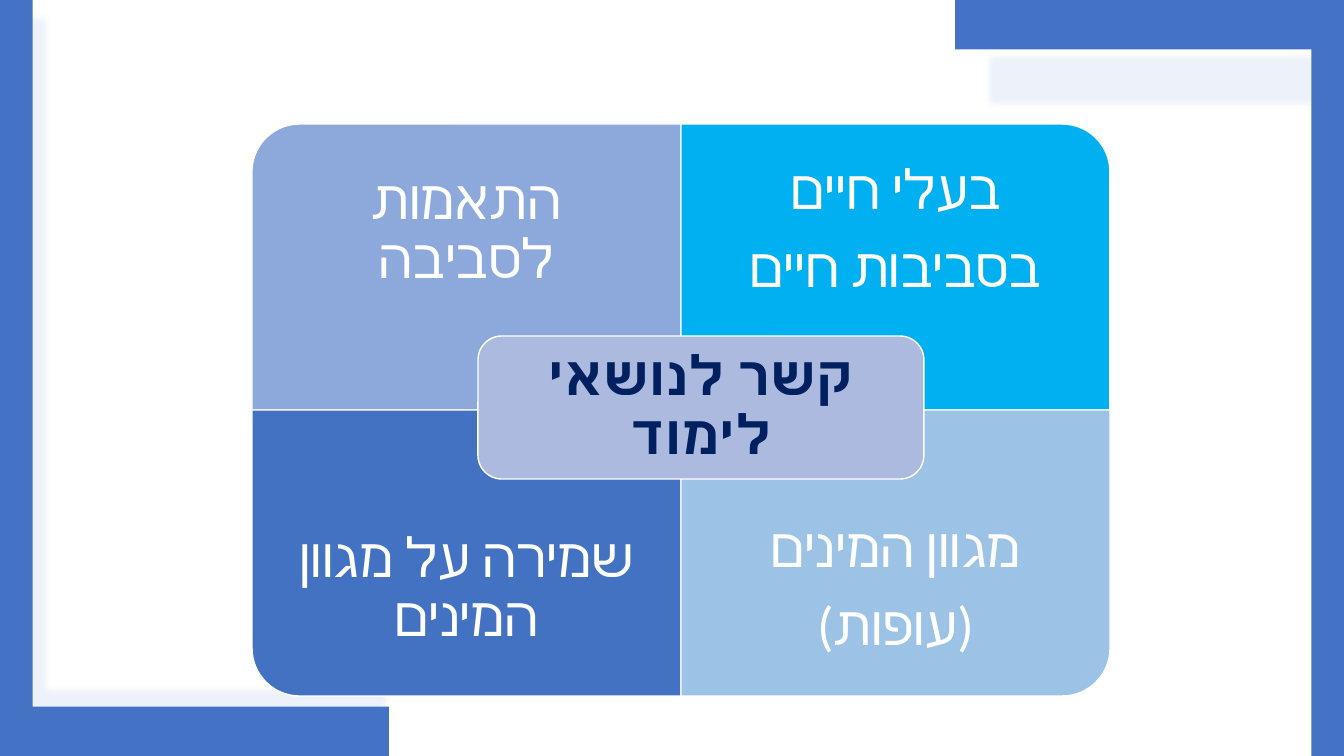
"""Builds a four-tile matrix slide of study topics with a central title."""
from lxml import etree
from pptx import Presentation
from pptx.dml.color import RGBColor
from pptx.enum.shapes import MSO_SHAPE as SHP
from pptx.enum.text import MSO_ANCHOR, PP_ALIGN
from pptx.oxml.ns import qn
from pptx.util import Emu, Pt

COLORS = {
    "frame": "4472C4", "shadow": "D2DDF1", "line": "FFFFFF", "text": "FFFFFF",
    "adaptation": "8DA9DB", "habitats": "00B0F0",
    "conservation": "4372C3", "species": "9CC2E5",
    "center": "ABBADE", "title": "002060",
}
TILES = [
    ("adaptation", 0, 0, 270, ["התאמות לסביבה"]),
    ("habitats", 1, 0, 0, ["בעלי חיים", "בסביבות חיים"]),
    ("conservation", 0, 1, 180, ["שמירה על מגוון המינים"]),
    ("species", 1, 1, 90, ["מגוון המינים", "(עופות)"]),
]
TITLE = ["קשר לנושאי לימוד"]
SLIDE_W, SLIDE_H = 1344, 756
FRAME_W = 389
FRAMES = [(SLIDE_W - FRAME_W, 180), (0, 0)]
GRID_X, GRID_Y = 252, 124
TILE_W, TILE_H = 429, 286
LABEL_H = TILE_H * 3 // 4
CENTER_BOX = (478, 336, 446, 143)
FONT = {"name": "Calibri", "size": Pt(39)}
PARA = {"alignment": PP_ALIGN.CENTER, "line_spacing": 0.9}
SHADOW = {"blurRad": "50800", "dist": "38100", "dir": "10800000",
          "sx": "95000", "sy": "95000", "algn": "r"}


def px(n):
    return Emu(round(n * 914400 / 100.8))


def rgb(key):
    return RGBColor.from_string(COLORS[key])


def set_all(obj, values):
    for name, value in values.items():
        setattr(obj, name, value)


def add_shape(s, kind, box, fill, rotation=0, outlined=True):
    sp = s.shapes.add_shape(kind, *map(px, box))
    sp.shadow.inherit = False
    sp.rotation = rotation
    sp.fill.solid()
    sp.fill.fore_color.rgb = rgb(fill)
    if outlined:
        sp.line.color.rgb = rgb("line")
        sp.line.width = Pt(1)
    else:
        sp.line.fill.background()
    return sp


def add_shadow(sp):
    effects = sp._element.spPr.find(qn("a:effectLst"))
    outer = etree.SubElement(effects, qn("a:outerShdw"), SHADOW)
    color = etree.SubElement(outer, qn("a:srgbClr"), val=COLORS["shadow"])
    etree.SubElement(color, qn("a:alpha"), val="40000")


def write(sp, lines, inset, color, bold=False):
    tf = sp.text_frame
    margins = {f"margin_{side}": px(inset) for side in ("left", "top", "right", "bottom")}
    set_all(tf, {"word_wrap": True, "vertical_anchor": MSO_ANCHOR.MIDDLE, **margins})
    for i, line in enumerate(lines):
        p = tf.add_paragraph() if i else tf.paragraphs[0]
        set_all(p, PARA)
        p.space_before = Pt(13.7 if i else 0)
        p._p.get_or_add_pPr().set("rtl", "1")
        r = p.add_run()
        r.text = line
        set_all(r.font, {**FONT, "bold": bold})
        r.font.color.rgb = rgb(color)
        etree.SubElement(r._r.get_or_add_rPr(), qn("a:cs"), typeface=FONT["name"])


def main():
    prs = Presentation()
    prs.slide_width, prs.slide_height = px(SLIDE_W), px(SLIDE_H)
    s = prs.slides.add_slide(prs.slide_layouts[6])

    for x, rotation in FRAMES:
        sp = add_shape(s, SHP.CORNER, (x, 0, FRAME_W, SLIDE_H), "frame", rotation, False)
        sp.adjustments[0], sp.adjustments[1] = 0.127, 0.084
        add_shadow(sp)

    for key, col, row, rotation, lines in TILES:
        x, y = GRID_X + col * TILE_W, GRID_Y + row * TILE_H
        w, h = (TILE_H, TILE_W) if rotation % 180 else (TILE_W, TILE_H)
        box = (x + (TILE_W - w) / 2, y + (TILE_H - h) / 2, w, h)
        add_shape(s, SHP.ROUND_1_RECTANGLE, box, key, rotation)
        label_y = y + row * (TILE_H - LABEL_H)
        label = s.shapes.add_textbox(*map(px, (x, label_y, TILE_W, LABEL_H)))
        write(label, lines, 30, "text")

    center = add_shape(s, SHP.ROUNDED_RECTANGLE, CENTER_BOX, "center")
    write(center, TITLE, 16, "title", True)
    prs.save("out.pptx")


if __name__ == "__main__":
    main()
